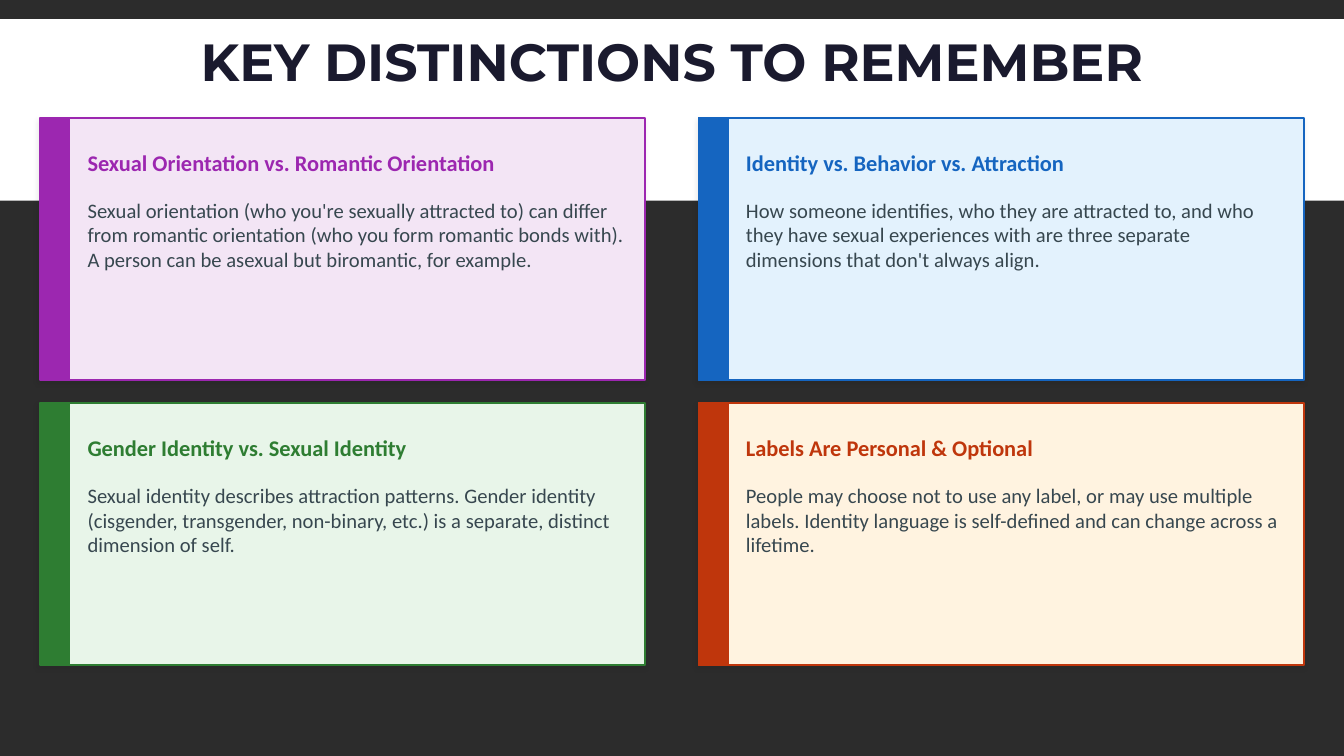
from dataclasses import dataclass

from lxml.etree import SubElement
from pptx import Presentation
from pptx.dml.color import RGBColor
from pptx.enum.shapes import MSO_SHAPE as Preset
from pptx.enum.text import MSO_ANCHOR as Anchor, PP_ALIGN as Align
from pptx.oxml.ns import qn
from pptx.shapes.autoshape import Shape
from pptx.slide import Slide
from pptx.util import Inches, Pt

CARD_WIDTH, CARD_HEIGHT = 6, 2.6
FIRST_LEFT, FIRST_TOP = 0.4, 1.17
COLUMN_STEP, ROW_STEP = 6.53, 2.83
STRIPE_WIDTH = 0.29
TEXT_INDENT, TEXT_WIDTH = 0.37, 5.53
HEADING_DROP, HEADING_HEIGHT, BODY_HEIGHT = 0.14, 0.6, 1.73


@dataclass
class Distinction:
    heading: str
    body: str
    accent: str
    tint: str


DISTINCTIONS = [
    Distinction(
        "Sexual Orientation vs. Romantic Orientation",
        "Sexual orientation (who you're sexually attracted to) can differ from romantic "
        "orientation (who you form romantic bonds with). A person can be asexual but "
        "biromantic, for example.",
        "9C27B0", "F3E5F5"),
    Distinction(
        "Identity vs. Behavior vs. Attraction",
        "How someone identifies, who they are attracted to, and who they have sexual "
        "experiences with are three separate dimensions that don't always align.",
        "1565C0", "E3F2FD"),
    Distinction(
        "Gender Identity vs. Sexual Identity",
        "Sexual identity describes attraction patterns. Gender identity (cisgender, "
        "transgender, non-binary, etc.) is a separate, distinct dimension of self.",
        "2E7D32", "E8F5E9"),
    Distinction(
        "Labels Are Personal & Optional",
        "People may choose not to use any label, or may use multiple labels. Identity "
        "language is self-defined and can change across a lifetime.",
        "BF360C", "FFF3E0"),
]


def color(value: str) -> RGBColor:
    return RGBColor.from_string(value)


def add_box(slide: Slide, left: float, top: float, width: float, height: float,
            fill: str, line: str | None = None, weight: float = 1) -> Shape:
    box = slide.shapes.add_shape(
        Preset.RECTANGLE, Inches(left), Inches(top), Inches(width), Inches(height))
    box.shadow.inherit = False
    box.fill.solid()
    box.fill.fore_color.rgb = color(fill)
    if line:
        box.line.color.rgb = color(line)
        box.line.width = Pt(weight)
    else:
        box.line.fill.background()
    return box


def add_soft_shadow(box: Shape) -> None:
    effects = box._element.spPr.find(qn("a:effectLst"))
    shadow = SubElement(effects, qn("a:outerShdw"), blurRad=str(Pt(4)),
                        dist=str(Pt(2)), dir="8100000", algn="bl", rotWithShape="0")
    tone = SubElement(shadow, qn("a:srgbClr"), val="000000")
    SubElement(tone, qn("a:alpha"), val="8000")


def add_text(slide: Slide, text: str, left: float, top: float, width: float,
             height: float, *, size: float, ink: str, font: str = "Calibri",
             bold: bool = False, align: Align = Align.LEFT,
             anchor: Anchor = Anchor.TOP) -> None:
    frame = slide.shapes.add_textbox(
        Inches(left), Inches(top), Inches(width), Inches(height)).text_frame
    frame.word_wrap = True
    frame.vertical_anchor = anchor
    paragraph = frame.paragraphs[0]
    paragraph.alignment = align
    run = paragraph.add_run()
    run.text = text
    run.font.name = font
    run.font.size = Pt(size)
    run.font.bold = bold
    run.font.color.rgb = color(ink)


def add_card(slide: Slide, distinction: Distinction, left: float, top: float) -> None:
    panel = add_box(slide, left, top, CARD_WIDTH, CARD_HEIGHT,
                    distinction.tint, distinction.accent, 1.5)
    add_soft_shadow(panel)
    add_box(slide, left, top, STRIPE_WIDTH, CARD_HEIGHT,
            distinction.accent, distinction.accent)
    text_left = left + TEXT_INDENT
    heading_top = top + HEADING_DROP
    add_text(slide, distinction.heading, text_left, heading_top, TEXT_WIDTH,
             HEADING_HEIGHT, size=16, ink=distinction.accent, bold=True,
             anchor=Anchor.MIDDLE)
    add_text(slide, distinction.body, text_left, heading_top + HEADING_HEIGHT,
             TEXT_WIDTH, BODY_HEIGHT, size=14.7, ink="37474F")


def main() -> None:
    deck = Presentation()
    deck.slide_width, deck.slide_height = Inches(13.33), Inches(7.5)
    slide = deck.slides.add_slide(deck.slide_layouts[6])
    slide.background.fill.solid()
    slide.background.fill.fore_color.rgb = color("2C2C2C")

    add_box(slide, 0, 0.19, 13.33, 1.8, "FFFFFF")
    add_text(slide, "KEY DISTINCTIONS TO REMEMBER", 0.53, 0.24, 12.27, 0.73,
             size=37.3, ink="1A1A2E", font="Montserrat", bold=True,
             align=Align.CENTER, anchor=Anchor.MIDDLE)

    for index, distinction in enumerate(DISTINCTIONS):
        row, column = divmod(index, 2)
        add_card(slide, distinction, FIRST_LEFT + column * COLUMN_STEP,
                 FIRST_TOP + row * ROW_STEP)

    deck.save("out.pptx")


if __name__ == "__main__":
    main()
